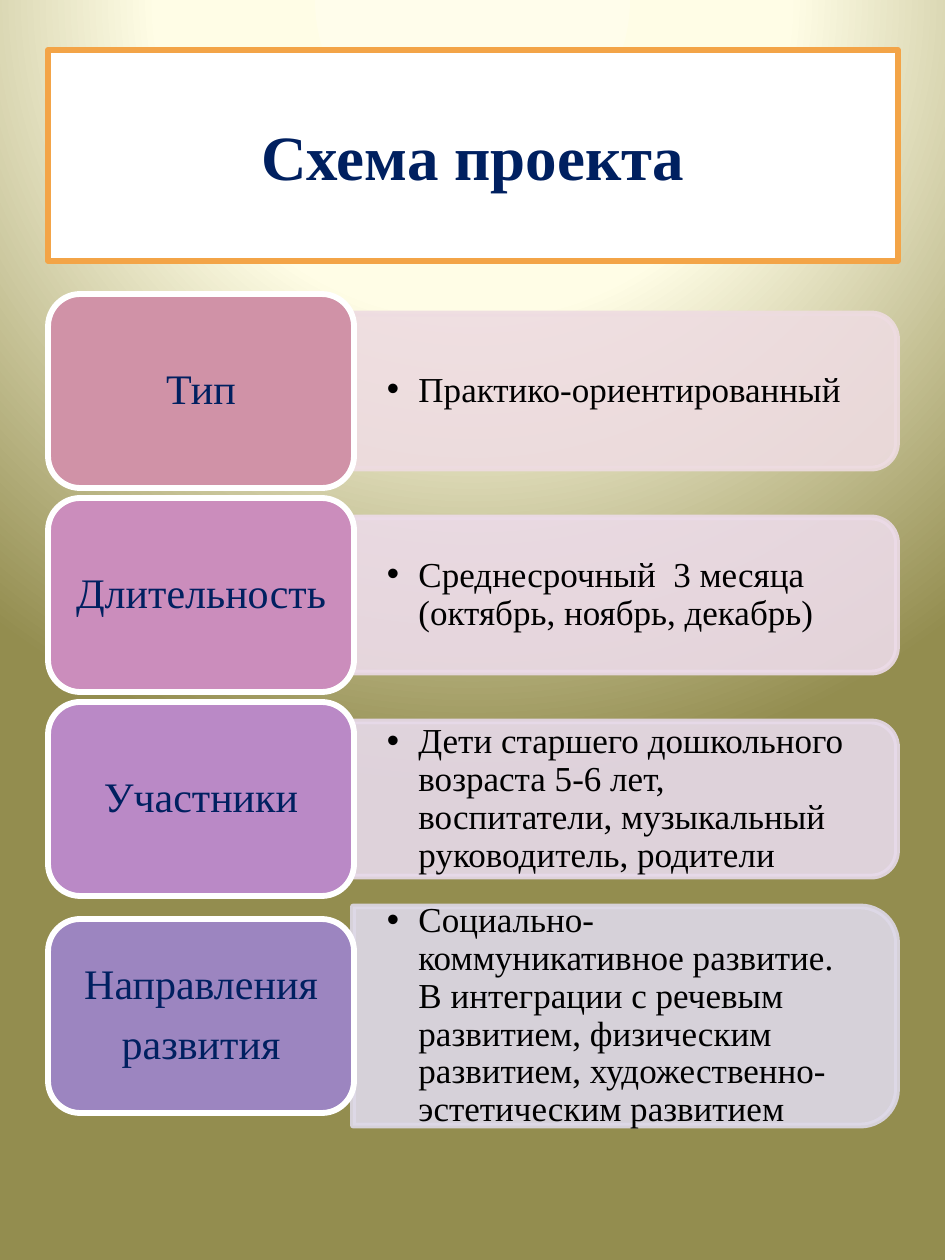
from dataclasses import dataclass

from lxml.etree import SubElement
from pptx import Presentation
from pptx.dml.color import RGBColor
from pptx.enum.shapes import MSO_SHAPE
from pptx.enum.text import MSO_ANCHOR, PP_ALIGN
from pptx.oxml import parse_xml
from pptx.oxml.ns import nsdecls, qn
from pptx.util import Emu, Pt

FONT = "Times New Roman"
COLORS = {
    "navy": "002060", "black": "000000", "white": "FFFFFF", "orange": "F3A447",
    "glow": "FFFDEB", "cream": "FFFDE6", "olive": "938D4F",
}
LINE_WIDTH = Pt(3.35)

# Layout in px
LEFT, TITLE_TOP, TITLE_W, TITLE_H = 48, 50, 850, 211
LABEL_W, LABEL_H = 306, 194
BAR_LEFT, BAR_LENGTH = 353, 544
FIRST_TOP, PITCH, LAST_TOP = 294, 204, 919
CORNER_INSET = 0.0488  # text inset of a rounded bar, as a share of its thickness


@dataclass
class Row:
    label: list[str]
    detail: str
    label_color: str
    bar_color: str
    top: int
    thickness: int = 155


ROWS = [
    Row(["Тип"], "Практико-ориентированный", "D092A7", "EEDCE1", FIRST_TOP),
    Row(["Длительность"], "Среднесрочный  3 месяца (октябрь, ноябрь, декабрь)",
        "CB8DBC", "ECDBE8", FIRST_TOP + PITCH),
    Row(["Участники"],
        "Дети старшего дошкольного возраста 5-6 лет, воспитатели, "
        "музыкальный руководитель, родители",
        "BA89C6", "E7DAEA", FIRST_TOP + 2 * PITCH),
    Row(["Направления", "развития"],
        "Социально-коммуникативное развитие. В интеграции с речевым развитием, "
        "физическим развитием, художественно-эстетическим развитием",
        "9C85C0", "DED9E8", LAST_TOP, 219),
]


def px(n: float) -> Emu:
    return Emu(round(n * 914400 / 126))


def rgb(color: str) -> RGBColor:
    return RGBColor.from_string(color)


def add_box(slide, kind, x: float, y: float, w: float, h: float, fill: str, line: str):
    sp = slide.shapes.add_shape(kind, px(x), px(y), px(w), px(h))
    sp.shadow.inherit = False
    sp.fill.solid()
    sp.fill.fore_color.rgb = rgb(fill)
    sp.line.color.rgb = rgb(line)
    sp.line.width = LINE_WIDTH
    return sp


def add_run(p, text: str, size: int, color: str, bold: bool = False) -> None:
    r = p.add_run()
    r.text = text
    r.font.name = FONT
    r.font.size = Pt(size)
    r.font.bold = bold
    r.font.color.rgb = rgb(color)


def write(tf, lines: list[str], size: int, color: str, after: int = 0,
          bold: bool = False, bullet: bool = False) -> None:
    tf.word_wrap = True
    tf.vertical_anchor = MSO_ANCHOR.MIDDLE
    for i, text in enumerate(lines):
        p = tf.add_paragraph() if i else tf.paragraphs[0]
        p.alignment = PP_ALIGN.LEFT if bullet else PP_ALIGN.CENTER
        pPr = p._p.get_or_add_pPr()
        if after:
            p.line_spacing = 0.9
            spacing = SubElement(pPr, qn("a:spcAft"))
            SubElement(spacing, qn("a:spcPct"), val=str(after * 1000))
        if bullet:
            p.level = 1
            pPr.set("marL", "228600")
            pPr.set("indent", "-228600")
            SubElement(pPr, qn("a:buFont"), typeface="Arial")
            SubElement(pPr, qn("a:buChar"), char="•")
        add_run(p, text, size, color, bold)


def add_bar(slide, row: Row) -> None:
    # The bar is a two-corner shape turned a quarter, so its frame is upright
    cx, cy = BAR_LEFT + BAR_LENGTH / 2, row.top + LABEL_H / 2
    sp = add_box(slide, MSO_SHAPE.ROUND_2_SAME_RECTANGLE,
                 cx - row.thickness / 2, cy - BAR_LENGTH / 2,
                 row.thickness, BAR_LENGTH, row.bar_color, row.bar_color)
    sp.rotation = 90
    for clr in sp._element.spPr.iter(qn("a:srgbClr")):
        SubElement(clr, qn("a:alpha"), val="90000")

    inset = row.thickness * CORNER_INSET
    height = row.thickness - 2 * inset
    tb = slide.shapes.add_textbox(px(BAR_LEFT), px(cy - height / 2),
                                  px(BAR_LENGTH - inset), px(height))
    tf = tb.text_frame
    tf.margin_left = tf.margin_right = px(34)
    tf.margin_top = tf.margin_bottom = px(17)
    write(tf, [row.detail], 20, COLORS["black"], after=15, bullet=True)


def add_label(slide, row: Row) -> None:
    sp = add_box(slide, MSO_SHAPE.ROUNDED_RECTANGLE, LEFT, row.top, LABEL_W, LABEL_H,
                 row.label_color, COLORS["white"])
    write(sp.text_frame, row.label, 24, COLORS["navy"], after=35)


def set_background(slide) -> None:
    stops = "".join(
        f'<a:gs pos="{pos * 1000}"><a:srgbClr val="{COLORS[name]}"/></a:gs>'
        for pos, name in [(0, "glow"), (40, "cream"), (100, "olive")])
    bg = parse_xml(
        f'<p:bg {nsdecls("p", "a")}><p:bgPr><a:gradFill rotWithShape="1">'
        f'<a:gsLst>{stops}</a:gsLst><a:path path="circle">'
        '<a:fillToRect l="50000" t="-80000" r="50000" b="180000"/></a:path>'
        '</a:gradFill><a:effectLst/></p:bgPr></p:bg>')
    slide._element.cSld.insert(0, bg)


def main() -> None:
    prs = Presentation()
    prs.slide_width, prs.slide_height = px(945), px(1260)
    s = prs.slides.add_slide(prs.slide_layouts[6])
    set_background(s)

    # Title
    title = add_box(s, MSO_SHAPE.RECTANGLE, LEFT, TITLE_TOP, TITLE_W, TITLE_H,
                    COLORS["white"], COLORS["orange"])
    write(title.text_frame, ["Схема проекта"], 36, COLORS["navy"], bold=True)

    # Project rows
    for row in ROWS:
        add_bar(s, row)
        add_label(s, row)

    prs.save("out.pptx")


if __name__ == "__main__":
    main()
